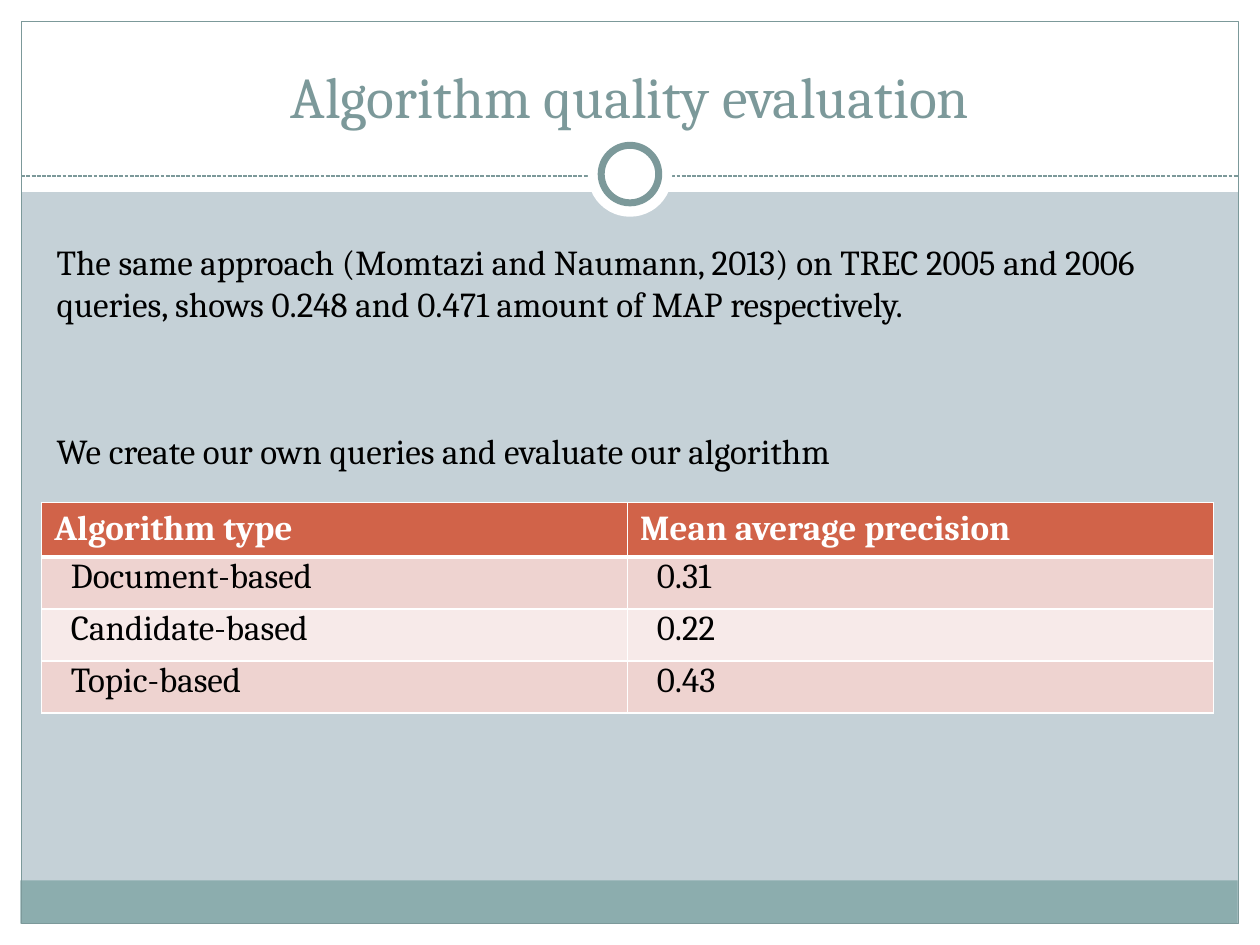
import pptx
import pptx.util
import pptx.dml.color
import pptx.enum.dml
import pptx.enum.shapes
import pptx.enum.text
import pptx.oxml
import pptx.oxml.ns

Cm, Pt = pptx.util.Cm, pptx.util.Pt
RGBColor = pptx.dml.color.RGBColor
SHAPE = pptx.enum.shapes.MSO_SHAPE
ALIGN = pptx.enum.text.PP_ALIGN
ANCHOR = pptx.enum.text.MSO_ANCHOR

WHITE = RGBColor(0xFF, 0xFF, 0xFF)
BLACK = RGBColor(0x00, 0x00, 0x00)
BACKGROUND = RGBColor(0xC5, 0xD1, 0xD7)
TEAL = RGBColor(0x7C, 0x99, 0x9A)
FOOTER = RGBColor(0x8C, 0xAD, 0xAE)
HEADER = RGBColor(0xD1, 0x63, 0x49)
BAND_DARK = RGBColor(0xEE, 0xD3, 0xD0)
BAND_LIGHT = RGBColor(0xF7, 0xEA, 0xE9)


def write(tf, text, size=20, color=BLACK, bold=False, align=ALIGN.LEFT, indent=0):
    tf.word_wrap = True
    p = tf.paragraphs[0]
    p.alignment = align
    if indent:
        p._p.get_or_add_pPr().set("indent", str(indent))
    r = p.add_run()
    r.text = text
    r.font.name = "Cambria"
    r.font.size = Pt(size)
    r.font.bold = bold
    r.font.color.rgb = color


def add_shape(kind, x, y, w, h, fill=None, line=None, width=0.75):
    sp = s.shapes.add_shape(kind, Cm(x), Cm(y), Cm(w), Cm(h))
    sp.shadow.inherit = False
    if fill is None:
        sp.fill.background()
    else:
        sp.fill.solid()
        sp.fill.fore_color.rgb = fill
    if line is None:
        sp.line.fill.background()
    else:
        sp.line.color.rgb = line
        sp.line.width = Pt(width)


prs = pptx.Presentation()
prs.slide_width, prs.slide_height = Cm(25.4), Cm(19.05)
s = prs.slides.add_slide(prs.slide_layouts[6])
s.background.fill.solid()
s.background.fill.fore_color.rgb = BACKGROUND

# White margins and title band
for x, y, w, h in [(0, 18.62, 25.4, 0.43), (0, 0, 25.4, 3.87),
                   (0, 0, 0.43, 19.05), (24.97, 0, 0.43, 19.05)]:
    add_shape(SHAPE.RECTANGLE, x, y, w, h, fill=WHITE)

# Footer band and frame
add_shape(SHAPE.RECTANGLE, 0.41, 17.75, 24.54, 0.87, fill=FOOTER)
add_shape(SHAPE.RECTANGLE, 0.43, 0.43, 24.54, 18.19, line=TEAL)

# Dashed divider
divider = s.shapes.add_connector(pptx.enum.shapes.MSO_CONNECTOR.STRAIGHT,
                                 Cm(0.43), Cm(3.55), Cm(24.97), Cm(3.55))
divider.line.color.rgb = TEAL
divider.line.width = Pt(0.75)
divider.line.dash_style = pptx.enum.dml.MSO_LINE.SQUARE_DOT
divider._element.spPr.append(pptx.oxml.parse_xml(
    f'<a:effectLst {pptx.oxml.ns.nsdecls("a")}/>'))

# Ring on the divider
add_shape(SHAPE.OVAL, 11.85, 2.67, 1.7, 1.7, fill=WHITE)
add_shape(SHAPE.OVAL, 12.12, 2.93, 1.16, 1.16, fill=WHITE, line=TEAL, width=4)

# Title
title = s.shapes.add_textbox(Cm(0.85), Cm(0.64), Cm(23.7), Cm(2.1))
title.text_frame.vertical_anchor = ANCHOR.BOTTOM
write(title.text_frame, "Algorithm quality evaluation", size=33, color=TEAL,
      align=ALIGN.CENTER)

# Results table
rows = [("Algorithm type", "Mean average precision"),
        ("Document-based", "0.31"),
        ("Candidate-based", "0.22"),
        ("Topic-based", "0.43")]
table = s.shapes.add_table(len(rows), 2, Cm(0.84), Cm(10.13),
                           Cm(23.62), Cm(4.19)).table
for i, row in enumerate(rows):
    for j, text in enumerate(row):
        cell = table.cell(i, j)
        tcPr = cell._tc.get_or_add_tcPr()
        widths = {"L": 1, "R": 1, "T": 3 if i == 1 else 1, "B": 3 if i == 0 else 1}
        for side, width in widths.items():
            tcPr.append(pptx.oxml.parse_xml(
                f'<a:ln{side} {pptx.oxml.ns.nsdecls("a")} w="{Pt(width)}">'
                f'<a:solidFill><a:srgbClr val="{WHITE}"/></a:solidFill></a:ln{side}>'))
        cell.fill.solid()
        if i == 0:
            cell.fill.fore_color.rgb = HEADER
            write(cell.text_frame, text, color=WHITE, bold=True)
        else:
            cell.fill.fore_color.rgb = BAND_DARK if i % 2 else BAND_LIGHT
            cell.margin_left = cell.margin_right = Cm(0.18)
            cell.margin_top = cell.margin_bottom = 0
            write(cell.text_frame, text, align=ALIGN.JUSTIFY, indent=Cm(0.41))

# Statements above the table
for y, h, text in [
        (4.72, 1.96, "The same approach (Momtazi and Naumann, 2013) on TREC 2005 and 2006 "
                     "queries, shows 0.248 and 0.471 amount of MAP respectively."),
        (8.53, 1.12, "We create our own queries and evaluate our algorithm")]:
    tb = s.shapes.add_textbox(Cm(0.89), Cm(y), Cm(23.19), Cm(h))
    tb.text_frame.auto_size = pptx.enum.text.MSO_AUTO_SIZE.SHAPE_TO_FIT_TEXT
    write(tb.text_frame, text)

prs.save("out.pptx")
